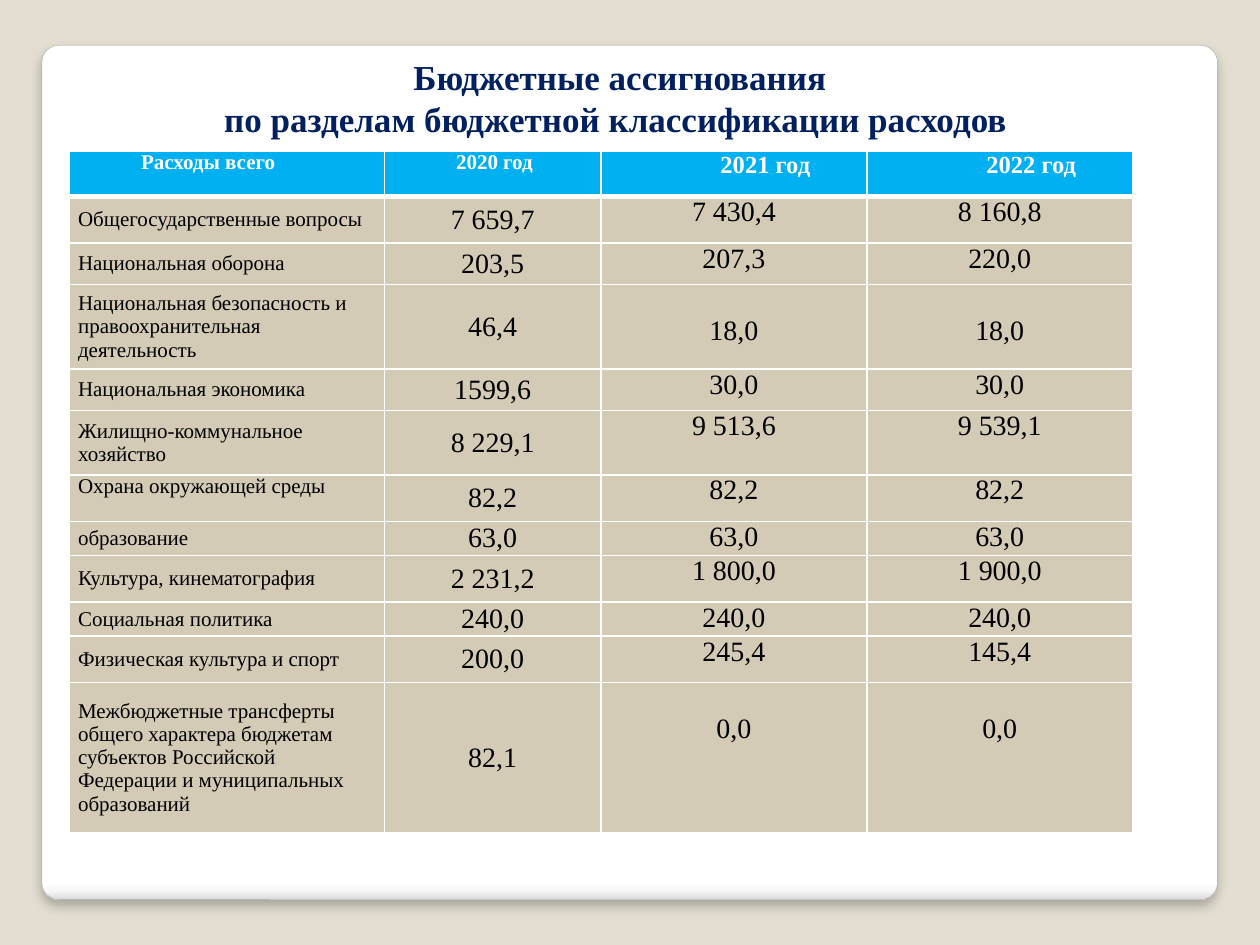
import pptx
import pptx.util
import pptx.dml.color
import pptx.enum.shapes
import pptx.enum.text
import pptx.oxml.ns
import lxml.etree

Pt = pptx.util.Pt
qn = pptx.oxml.ns.qn
add = lxml.etree.SubElement
align = pptx.enum.text.PP_ALIGN
anchor = pptx.enum.text.MSO_ANCHOR
hues = {"sand": "E3DED1", "white": "FFFFFF", "edge": "A4A4A4", "navy": "002060",
        "head": "00B0F0", "body": "D3CBB6", "black": "000000"}

deck = pptx.Presentation()
deck.slide_width = pptx.util.Inches(10)
deck.slide_height = pptx.util.Inches(7.5)
col = deck.slide_width / 100
row = deck.slide_height / 100
slide = deck.slides.add_slide(deck.slide_layouts[6])


def paint(fill, hue):
    fill.solid()
    fill.fore_color.rgb = pptx.dml.color.RGBColor.from_string(hues[hue])


def write(para, text, size, hue, bold):
    run = para.add_run()
    run.text = text
    run.font.name = "Times New Roman"
    run.font.size = Pt(size)
    run.font.bold = bold
    paint(run.font.fill, hue)


paint(slide.background.fill, "sand")

card = slide.shapes.add_shape(
    pptx.enum.shapes.MSO_SHAPE.ROUNDED_RECTANGLE,
    int(3.33 * col), int(4.8 * row), int(93.3 * col), int(90.4 * row))
card.adjustments[0] = 0.02
card.fill.gradient()
card.fill.gradient_angle = 270
paint(card.line.fill, "edge")
card.line.width = Pt(0.16)
card.shadow.inherit = False
props = card._element.spPr
stops = props.find(qn("a:gradFill")).find(qn("a:gsLst"))
for stop in list(stops):
    stops.remove(stop)
for place, tone in [(0, "FFFFFF"), (98, "FFFFFF"), (99, "F7F7F7"), (100, "DADADA")]:
    stop = add(stops, qn("a:gs"), pos=str(place * 1000))
    add(stop, qn("a:srgbClr"), val=tone)
shade = add(props.find(qn("a:effectLst")), qn("a:outerShdw"), blurRad=str(Pt(6)),
            dist=str(Pt(4)), dir="5400000", algn="tl", rotWithShape="0")
tone = add(shade, qn("a:srgbClr"), val=hues["black"])
add(tone, qn("a:alpha"), val="25000")

title = slide.shapes.add_textbox(
    int(7.8 * col), int(5.2 * row), int(82.8 * col), int(10.27 * row))
title.text_frame.word_wrap = True
para = title.text_frame.paragraphs[0]
para.alignment = align.CENTER
write(para, "Бюджетные ассигнования", 20, "navy", True)
para.add_line_break()
write(para, "по разделам бюджетной классификации расходов ", 20, "navy", True)

data = [
    (4.8, "Расходы всего", "2020 год", "2021 год", "2022 год"),
    (4.93, "Общегосударственные вопросы", "7 659,7", "7 430,4", "8 160,8"),
    (4.4, "Национальная оборона", "203,5", "207,3", "220,0"),
    (8.93, "Национальная безопасность и правоохранительная деятельность",
     "46,4", "18,0", "18,0"),
    (4.4, "Национальная экономика", "1599,6", "30,0", "30,0"),
    (6.8, "Жилищно-коммунальное хозяйство", "8 229,1", "9 513,6", "9 539,1"),
    (4.93, "Охрана окружающей среды", "82,2", "82,2", "82,2"),
    (3.6, "образование", "63,0", "63,0", "63,0"),
    (4.93, "Культура, кинематография", "2 231,2", "1 800,0", "1 900,0"),
    (3.6, "Социальная политика", "240,0", "240,0", "240,0"),
    (4.93, "Физическая культура и спорт", "200,0", "245,4", "145,4"),
    (15.87, "Межбюджетные трансферты общего характера бюджетам субъектов "
     "Российской Федерации и муниципальных образований", "82,1", "0,0", "0,0"),
]
widths = [25, 17.2, 21.1, 21.1]
lowered = (3, 11)
top_label = 6

grid = slide.shapes.add_table(
    len(data), len(widths), int(5.5 * col), int(16 * row), int(sum(widths) * col),
    int(sum(line[0] for line in data) * row)).table
grid.horz_banding = False
for c, width in enumerate(widths):
    grid.columns[c].width = int(width * col)

for r, (height, *texts) in enumerate(data):
    grid.rows[r].height = int(height * row)
    for c, text in enumerate(texts):
        cell = grid.cell(r, c)
        cell.margin_left = cell.margin_right = int(0.7 * col)
        cell.margin_top = cell.margin_bottom = 0
        para = cell.text_frame.paragraphs[0]
        if r == 0:
            para.alignment = align.LEFT if c < 2 else align.CENTER
            para._p.get_or_add_pPr().set("indent", str(int(5 * col)))
            write(para, text, 12 if c < 2 else 14, "white", True)
        else:
            para.alignment = align.CENTER if c else align.LEFT
            write(para, text, 16 if c else 12, "black", False)
        middle = r > 0 and c < 2 and (r, c) != (top_label, 0)
        cell.vertical_anchor = anchor.MIDDLE if middle else anchor.TOP
        if r in lowered and c > 1:
            cell.margin_top = int(3.3 * row)
        box = cell._tc.get_or_add_tcPr()
        for side in "LRTB":
            thick = (r == 0 and side == "B") or (r == 1 and side == "T")
            line = add(box, qn("a:ln" + side), w=str(Pt(3 if thick else 1)))
            add(add(line, qn("a:solidFill")), qn("a:srgbClr"), val=hues["white"])
        paint(cell.fill, "body" if r else "head")

deck.save("out.pptx")
